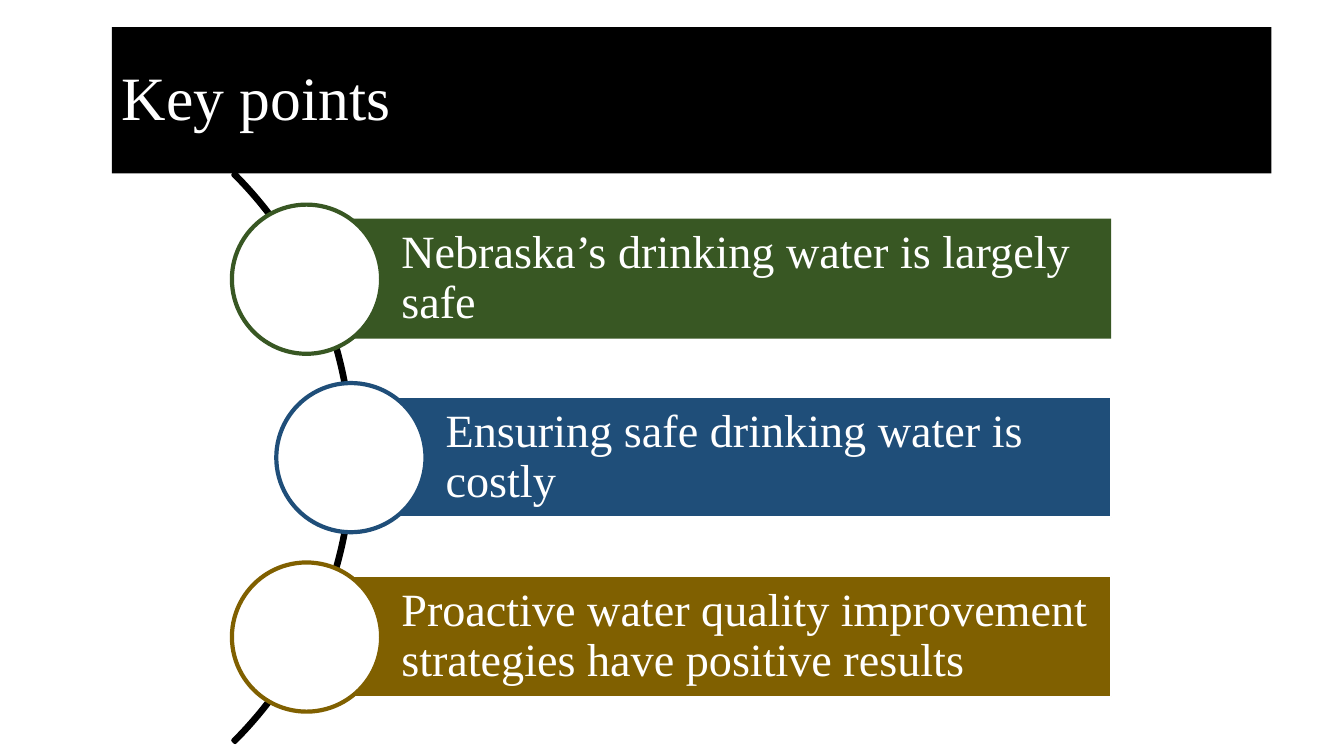
from pptx import Presentation
from pptx import util as u
from pptx.dml.color import RGBColor
from pptx.enum import shapes, text

PX = 9144
THEME = {
    "font": "Times New Roman",
    "black": "000000",
    "white": "FFFFFF",
    "green": "385723",
    "blue": "1F4E79",
    "gold": "806000",
    "title_size": 44,
    "point_size": 33,
}
KINDS = shapes.MSO_SHAPE

deck = Presentation()
deck.slide_width, deck.slide_height = 1333 * PX, 750 * PX
slide = deck.slides.add_slide(deck.slide_layouts[6])


def add_figure(kind, box, fill=None, line=None, weight=3):
    figure = slide.shapes.add_shape(kind, *(side * PX for side in box))
    figure.shadow.inherit = False
    for paint, color in ((figure.fill, fill), (figure.line.fill, line)):
        if color:
            paint.solid()
            paint.fore_color.rgb = RGBColor.from_string(THEME[color])
        else:
            paint.background()
    if line:
        figure.line.width = u.Pt(weight)
    return figure


def write(figure, wording, size, margins):
    frame = figure.text_frame
    settings = {"word_wrap": True, "vertical_anchor": text.MSO_ANCHOR.MIDDLE}
    for side, margin in zip(("left", "top", "right", "bottom"), margins):
        settings[f"margin_{side}"] = margin * PX
    for name, value in settings.items():
        setattr(frame, name, value)
    paragraph = frame.paragraphs[0]
    paragraph.alignment = text.PP_ALIGN.LEFT
    paragraph.line_spacing = 0.9
    run = paragraph.add_run()
    run.text = wording
    run.font.name = THEME["font"]
    run.font.size = u.Pt(THEME[size])
    run.font.color.rgb = RGBColor.from_string(THEME["white"])


arc = add_figure(KINDS.BLOCK_ARC, (-448, 55, 798, 798), line="black")
for index, value in enumerate((189, 27, 0.003)):
    arc.adjustments[index] = value

BAR_RIGHT, BAR_HEIGHT, CIRCLE = 1102, 119, 148
key_points = [
    ("Nebraska’s drinking water is largely safe", 304, 217, "green", None),
    ("Ensuring safe drinking water is costly", 348, 394, "blue", "white"),
    ("Proactive water quality improvement strategies have positive results",
     304, 572, "gold", "white"),
]
for wording, left, top, color, outline in key_points:
    bar = add_figure(KINDS.RECTANGLE, (left, top, BAR_RIGHT - left, BAR_HEIGHT),
                     color, outline, 1)
    write(bar, wording, "point_size", (94, 9, 9, 9))
    circle_top = top - (CIRCLE - BAR_HEIGHT) // 2
    add_figure(KINDS.OVAL, (left - CIRCLE // 2, circle_top, CIRCLE, CIRCLE), "white", color)

title = add_figure(KINDS.RECTANGLE, (111, 27, 1150, 145), "black")
write(title, "Key points", "title_size", (10, 5, 10, 5))

deck.save("out.pptx")
